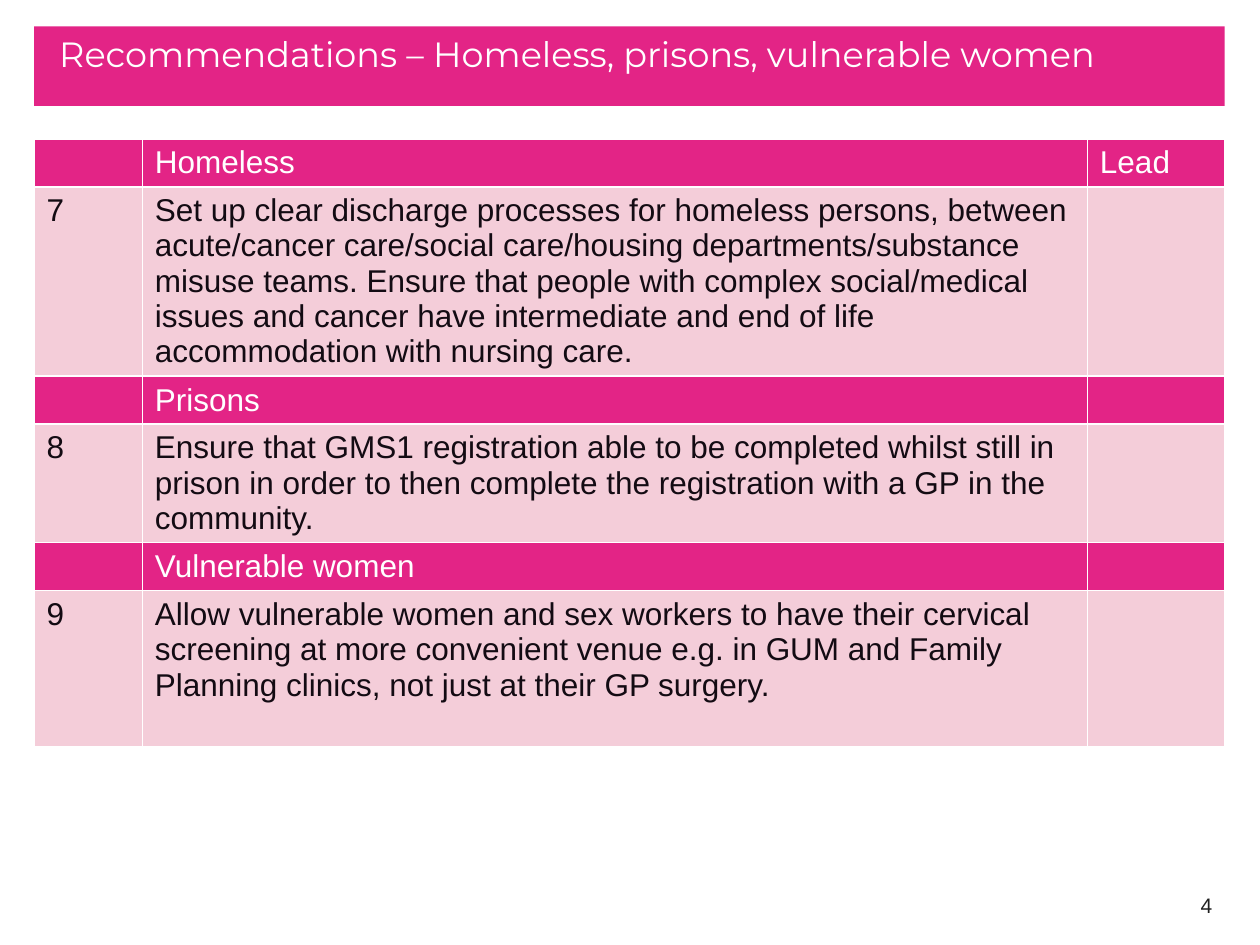
from pptx import Presentation
from pptx.dml.color import RGBColor
from pptx.enum.text import MSO_ANCHOR as Anchor, MSO_AUTO_SIZE as AutoSize, PP_ALIGN as Align
from pptx.util import Inches, Pt

COLORS = {"pink": "E32486", "blush": "F4CDD9", "ink": "130B13", "number": "202020", "white": "FFFFFF"}
WIDTH, HEIGHT = Inches(10), Inches(7.5)
LEFT, SPAN = 0.027, 0.945
COLUMN_INCHES = [0.86, 7.5, 1.09]
HEADING_HEIGHT = 0.37
SECTIONS = [
    ("Homeless", "Lead", "7", 1.5,
     "Set up clear discharge processes for homeless persons, between acute/cancer care/social care/housing "
     "departments/substance misuse teams. Ensure that people with complex social/medical issues and cancer "
     "have intermediate and end of life accommodation with nursing care."),
    ("Prisons", "", "8", 0.94,
     "Ensure that GMS1 registration able to be completed whilst still in prison in order to then complete "
     "the registration with a GP in the community."),
    ("Vulnerable women", "", "9", 1.24,
     "Allow vulnerable women and sex workers to have their cervical screening at more convenient venue "
     "e.g. in GUM and Family Planning clinics, not just at their GP surgery."),
]


def share_box(left, top, width, height):
    return [int(WIDTH * left), int(HEIGHT * top), int(WIDTH * width), int(HEIGHT * height)]


def set_attributes(target, values):
    for name, value in values.items():
        setattr(target, name, value)


def paint(target, color):
    target.fill.solid()
    target.fill.fore_color.rgb = RGBColor.from_string(COLORS[color])


def write_text(frame, text, size, color, font="Arial", align=Align.LEFT):
    paragraph = frame.paragraphs[0]
    paragraph.alignment = align
    target = paragraph
    if text:
        target = paragraph.add_run()
        target.text = text
    set_attributes(target.font, {"size": Pt(size), "name": font, "bold": False})
    target.font.color.rgb = RGBColor.from_string(COLORS[color])


def place_title(slide, box):
    title = slide.shapes.title
    set_attributes(title, dict(zip(("left", "top", "width", "height"), box)))
    paint(title, "pink")
    set_attributes(title.text_frame, {
        "margin_left": Inches(0.2), "vertical_anchor": Anchor.TOP,
        "auto_size": AutoSize.NONE, "word_wrap": True,
    })
    write_text(title.text_frame, "Recommendations – Homeless, prisons, vulnerable women",
               20, "white", "Montserrat")


def place_recommendations(slide, box):
    rows = []
    for heading, lead, number, height, advice in SECTIONS:
        rows.append((HEADING_HEIGHT, "pink", "white", ("", heading, lead)))
        rows.append((height, "blush", "ink", (number, advice, "")))
    table = slide.shapes.add_table(len(rows), len(COLUMN_INCHES), *box).table
    for column, width in zip(table.columns, COLUMN_INCHES):
        column.width = int(box[2] * width / sum(COLUMN_INCHES))
    total = sum(row[0] for row in rows)
    for row, (height, fill, color, texts) in zip(table.rows, rows):
        row.height = int(box[3] * height / total)
        for cell, text in zip(row.cells, texts):
            paint(cell, fill)
            write_text(cell.text_frame, text, 18, color)


def place_page_number(slide, box):
    frame = slide.shapes.add_textbox(*box).text_frame
    set_attributes(frame, {"word_wrap": True, "vertical_anchor": Anchor.MIDDLE})
    write_text(frame, "4", 12, "number", align=Align.RIGHT)


def main():
    presentation = Presentation()
    set_attributes(presentation, {"slide_width": WIDTH, "slide_height": HEIGHT})
    slide = presentation.slides.add_slide(presentation.slide_layouts[5])
    place_title(slide, share_box(LEFT, 0.028, SPAN, 0.084))
    place_recommendations(slide, share_box(LEFT, 0.147, SPAN, 0.64))
    place_page_number(slide, share_box(0.739, 0.931, 0.233, 0.053))
    presentation.save("out.pptx")


if __name__ == "__main__":
    main()
